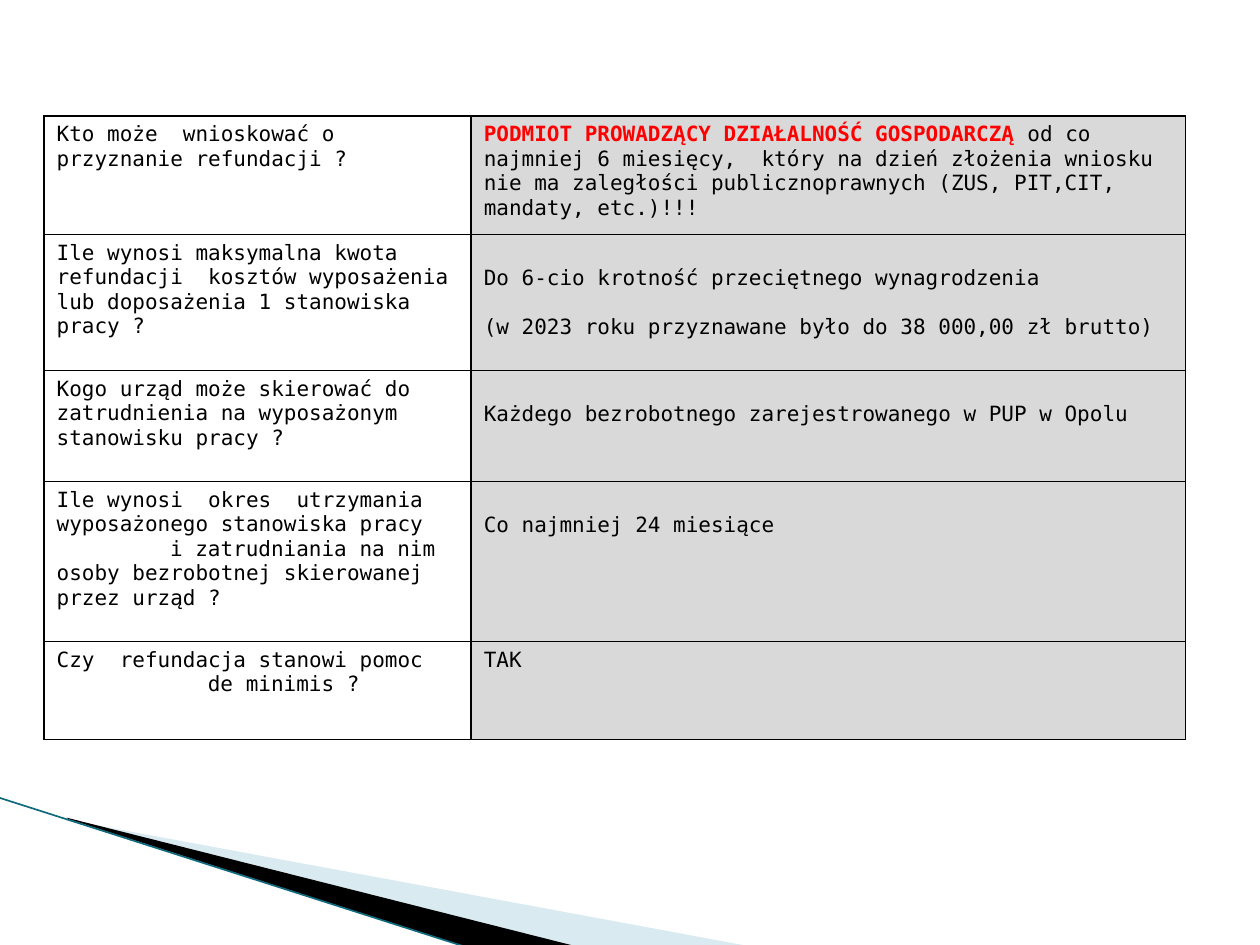
from lxml.etree import SubElement
from pptx import Presentation
from pptx.dml.color import RGBColor
from pptx.enum.shapes import MSO_CONNECTOR
from pptx.oxml.ns import qn
from pptx.util import Inches, Pt

COLORS = {
    "text": "000000",
    "accent": "FF0000",
    "question": "FFFFFF",
    "answer": "D9D9D9",
    "border": "000000",
    "pale_wedge": "A0CBDC",
    "dark_wedge": "000000",
    "edge": "0F6A7E",
}
FONT = "DejaVu Sans Mono"
COLUMN_WIDTHS = [3.39, 5.67]
ROW_HEIGHTS = [0.94, 1.08, 0.88, 1.27, 0.78]
TOP_MARGIN = 0.05
LOWERED_MARGIN = 0.25
PARAGRAPH_GAP = 14
HIGHLIGHT = "PODMIOT PROWADZĄCY DZIAŁALNOŚĆ GOSPODARCZĄ"

QUESTIONS = [
    [("Kto może  wnioskować o przyznanie refundacji ?", 0)],
    [("Ile wynosi maksymalna kwota refundacji  kosztów wyposażenia "
      "lub doposażenia 1 stanowiska pracy ?", 0)],
    [("Kogo urząd może skierować do zatrudnienia na wyposażonym "
      "stanowisku pracy ?", 0)],
    [("Ile wynosi  okres  utrzymania wyposażonego stanowiska pracy", 0),
     ("i zatrudniania na nim osoby bezrobotnej skierowanej przez urząd ?", 0.9)],
    [("Czy  refundacja stanowi pomoc", 0), ("de minimis ?", 1.2)],
]
ANSWERS = [
    ([HIGHLIGHT + " od co najmniej 6 miesięcy,  który na dzień złożenia wniosku "
      "nie ma zaległości publicznoprawnych (ZUS, PIT,CIT, mandaty, etc.)!!!"],
     TOP_MARGIN),
    (["Do 6-cio krotność przeciętnego wynagrodzenia",
      "(w 2023 roku przyznawane było do 38 000,00 zł brutto)"], LOWERED_MARGIN),
    (["Każdego bezrobotnego zarejestrowanego w PUP w Opolu"], LOWERED_MARGIN),
    (["Co najmniej 24 miesiące"], LOWERED_MARGIN),
    (["TAK"], TOP_MARGIN),
]


def rgb(name):
    """Return the named colour."""
    return RGBColor.from_string(COLORS[name])


def add_wedge(slide, points, color, alpha=100):
    """Draw a filled polygon through points given in inches."""
    start, *others = [(Inches(x), Inches(y)) for x, y in points]
    builder = slide.shapes.build_freeform(*start)
    builder.add_line_segments(others, close=True)
    shape = builder.convert_to_shape()
    shape.shadow.inherit = False
    shape.fill.solid()
    shape.fill.fore_color.rgb = rgb(color)
    shape.line.fill.background()
    if alpha < 100:
        fill_color = shape.fill._xPr.find(qn("a:solidFill"))[0]
        SubElement(fill_color, qn("a:alpha"), val=str(alpha * 1000))


def add_edge(slide, start, end):
    """Draw the thin slanted line along the wedges."""
    points = [Inches(value) for value in (*start, *end)]
    connector = slide.shapes.add_connector(MSO_CONNECTOR.STRAIGHT, *points)
    connector.line.color.rgb = rgb("edge")
    connector.line.width = Pt(0.95)
    SubElement(connector._element.spPr, qn("a:effectLst"))


def format_cell(cell, fill):
    """Give a cell black borders and a plain fill."""
    properties = cell._tc.get_or_add_tcPr()
    for side in ("lnL", "lnR", "lnT", "lnB"):
        line = SubElement(properties, qn(f"a:{side}"), w=str(Pt(1)))
        solid = SubElement(line, qn("a:solidFill"))
        SubElement(solid, qn("a:srgbClr"), val=COLORS["border"])
    cell.fill.solid()
    cell.fill.fore_color.rgb = rgb(fill)


def add_run(paragraph, text, color="text", bold=False):
    """Append a formatted run to a paragraph."""
    run = paragraph.add_run()
    run.text = text
    run.font.name = FONT
    run.font.size = Pt(12)
    run.font.bold = bold
    run.font.color.rgb = rgb(color)


def cell_paragraphs(cell, count):
    """Return the given number of paragraphs in a cell."""
    for _ in range(count - 1):
        cell.text_frame.add_paragraph()
    return cell.text_frame.paragraphs


def fill_question(cell, parts):
    """Write a question whose parts may have a first-line indent."""
    format_cell(cell, "question")
    for paragraph, (text, indent) in zip(cell_paragraphs(cell, len(parts)), parts):
        if indent:
            properties = paragraph._p.get_or_add_pPr()
            properties.set("marL", "0")
            properties.set("indent", str(Inches(indent)))
        add_run(paragraph, text)


def fill_answer(cell, texts, margin):
    """Write an answer, with its highlighted opening in red."""
    format_cell(cell, "answer")
    cell.margin_top = Inches(margin)
    for index, paragraph in enumerate(cell_paragraphs(cell, len(texts))):
        text = texts[index]
        if index:
            paragraph.space_before = Pt(PARAGRAPH_GAP)
        if text.startswith(HIGHLIGHT):
            add_run(paragraph, HIGHLIGHT, "accent", True)
            text = text.removeprefix(HIGHLIGHT)
        add_run(paragraph, text)


def add_refund_table(slide):
    """Add the table of questions and answers about the refund."""
    frame = slide.shapes.add_table(
        len(QUESTIONS), len(COLUMN_WIDTHS), Inches(0.35), Inches(0.92),
        Inches(sum(COLUMN_WIDTHS)), Inches(sum(ROW_HEIGHTS)))
    table = frame.table
    table.first_row = table.horz_banding = False
    for column, width in zip(table.columns, COLUMN_WIDTHS):
        column.width = Inches(width)
    for row, height, question, answer in zip(
            table.rows, ROW_HEIGHTS, QUESTIONS, ANSWERS):
        row.height = Inches(height)
        fill_question(row.cells[0], question)
        fill_answer(row.cells[1], *answer)


def main():
    """Build and save the slide."""
    presentation = Presentation()
    presentation.slide_width = Inches(10)
    presentation.slide_height = Inches(7.5)
    slide = presentation.slides.add_slide(presentation.slide_layouts[6])
    add_wedge(slide, [(0.55, 6.51), (5.95, 7.51), (4.56, 7.51), (0.55, 6.5)],
              "pale_wedge", 40)
    add_wedge(slide, [(0.53, 6.49), (4.57, 7.51), (3.72, 7.52), (0.54, 6.5)],
              "dark_wedge")
    add_edge(slide, (-0.01, 6.33), (3.71, 7.52))
    add_refund_table(slide)
    presentation.save("out.pptx")


if __name__ == "__main__":
    main()
